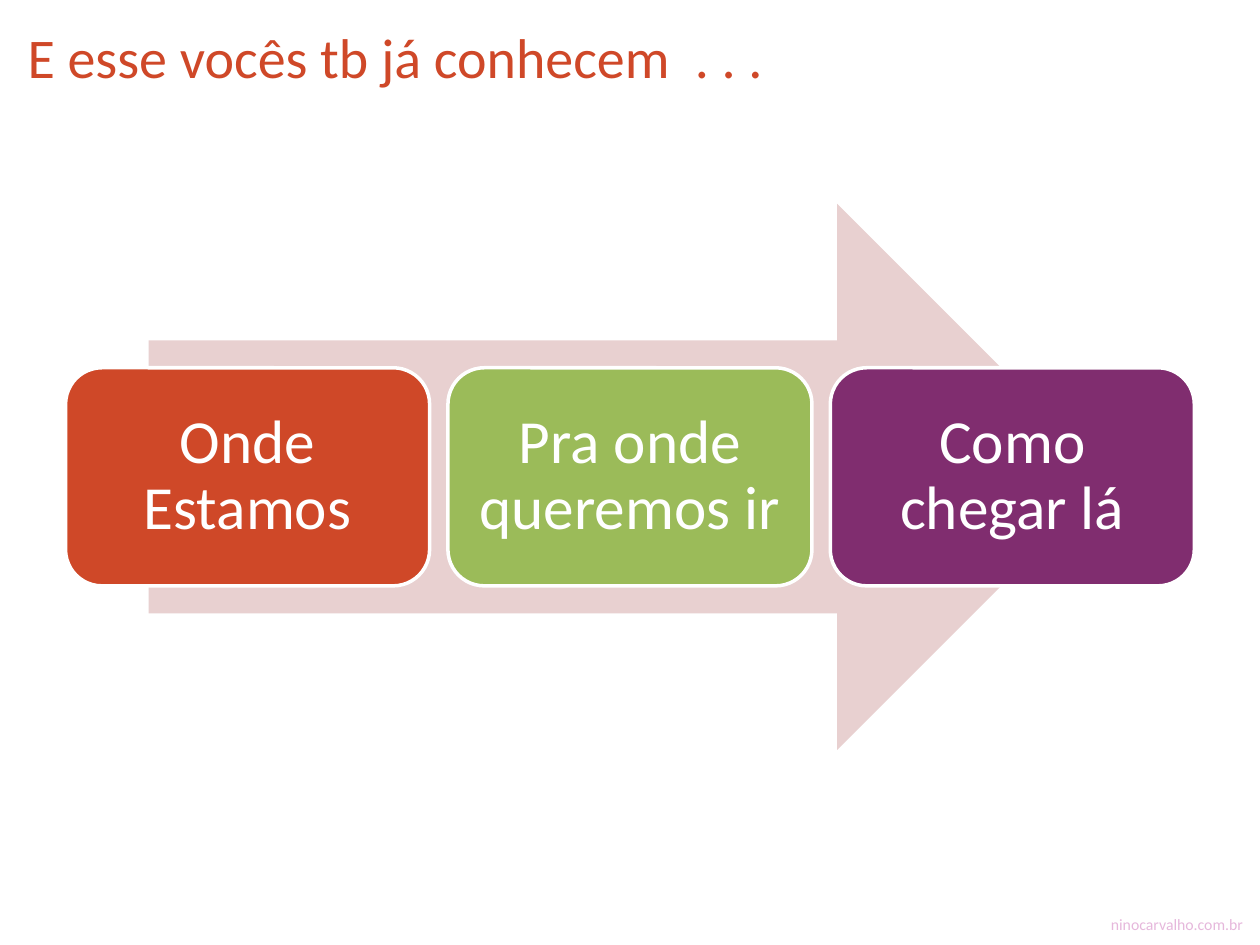
"""Build the three-step arrow slide."""
from dataclasses import dataclass
from typing import Any

from pptx import Presentation
from pptx.dml.color import RGBColor
from pptx.enum.shapes import MSO_SHAPE as Shape
from pptx.enum.text import MSO_ANCHOR as Anchor, PP_ALIGN as Align
from pptx.util import Pt


@dataclass(frozen=True)
class Theme:
    """Hold the font, colours and type sizes."""
    font: str = "Calibri"
    red: str = "CF4828"
    green: str = "9BBB59"
    plum: str = "802D6F"
    blush: str = "E8D0D0"
    pink: str = "E6B8DC"
    white: str = "FFFFFF"
    head: float = 32
    step: float = 35
    foot: float = 9


@dataclass(frozen=True)
class Box:
    """Hold a frame in points."""
    left: float
    top: float
    width: float
    height: float

    def args(self) -> tuple[int, ...]:
        """Return the frame as lengths."""
        return tuple(Pt(n) for n in (self.left, self.top, self.width, self.height))


@dataclass(frozen=True)
class Step:
    """Hold the label and colour of a step."""
    label: str
    fill: str


THEME = Theme()
WIDTH, HEIGHT = 720, 540
MID = 272.5
EDGE, GAP = 37.5, 10.5
STEPS = (
    Step("Onde Estamos", THEME.red),
    Step("Pra onde queremos ir", THEME.green),
    Step("Como chegar lá", THEME.plum),
)


def write(shape: Any, text: str, *, size: float, color: str,
          align: Align = Align.LEFT, anchor: Anchor = Anchor.TOP,
          inset: float | None = None, lead: float = 1.0) -> None:
    """Write one formatted paragraph into a shape."""
    frame = shape.text_frame
    frame.word_wrap = True
    frame.vertical_anchor = anchor
    if inset is not None:
        frame.margin_left = frame.margin_right = Pt(inset)
        frame.margin_top = frame.margin_bottom = Pt(inset)
    para = frame.paragraphs[0]
    para.alignment, para.line_spacing = align, lead
    run = para.add_run()
    run.text = text
    run.font.name, run.font.size = THEME.font, Pt(size)
    run.font.color.rgb = RGBColor.from_string(color)


def draw(slide: Any, kind: Shape, box: Box, fill: str, line: str | None = None) -> Any:
    """Draw a filled shape with an optional outline."""
    shape = slide.shapes.add_shape(kind, *box.args())
    shape.shadow.inherit = False
    shape.fill.solid()
    shape.fill.fore_color.rgb = RGBColor.from_string(fill)
    if line:
        shape.line.color.rgb = RGBColor.from_string(line)
        shape.line.width = Pt(2)
    else:
        shape.line.fill.background()
    return shape


def chain(slide: Any, steps: tuple[Step, ...], tall: float) -> None:
    """Draw the steps as an evenly spaced row."""
    wide = (WIDTH - 2 * EDGE - GAP * (len(steps) - 1)) / len(steps)
    for i, step in enumerate(steps):
        box = Box(EDGE + i * (wide + GAP), MID - tall / 2, wide, tall)
        card = draw(slide, Shape.ROUNDED_RECTANGLE, box, step.fill, THEME.white)
        write(card, step.label, size=THEME.step, color=THEME.white,
              align=Align.CENTER, anchor=Anchor.MIDDLE, inset=10.8, lead=0.9)


def main() -> None:
    """Build and save the deck."""
    deck = Presentation()
    deck.slide_width, deck.slide_height = Pt(WIDTH), Pt(HEIGHT)
    slide = deck.slides.add_slide(deck.slide_layouts[5])

    title = slide.shapes.title
    title.left, title.top, title.width, title.height = Box(8.6, 9.4, 654.5, 39.6).args()
    write(title, "E esse vocês tb já conhecem  . . .", size=THEME.head, color=THEME.red)

    foot = slide.shapes.add_textbox(*Box(17.3, 519, 700, 12.2).args())
    write(foot, "ninocarvalho.com.br", size=THEME.foot, color=THEME.pink, align=Align.RIGHT)

    tall = 312
    draw(slide, Shape.RIGHT_ARROW, Box(85, MID - tall / 2, 549.4, tall), THEME.blush)
    chain(slide, STEPS, 124.6)
    deck.save("out.pptx")


if __name__ == "__main__":
    main()
